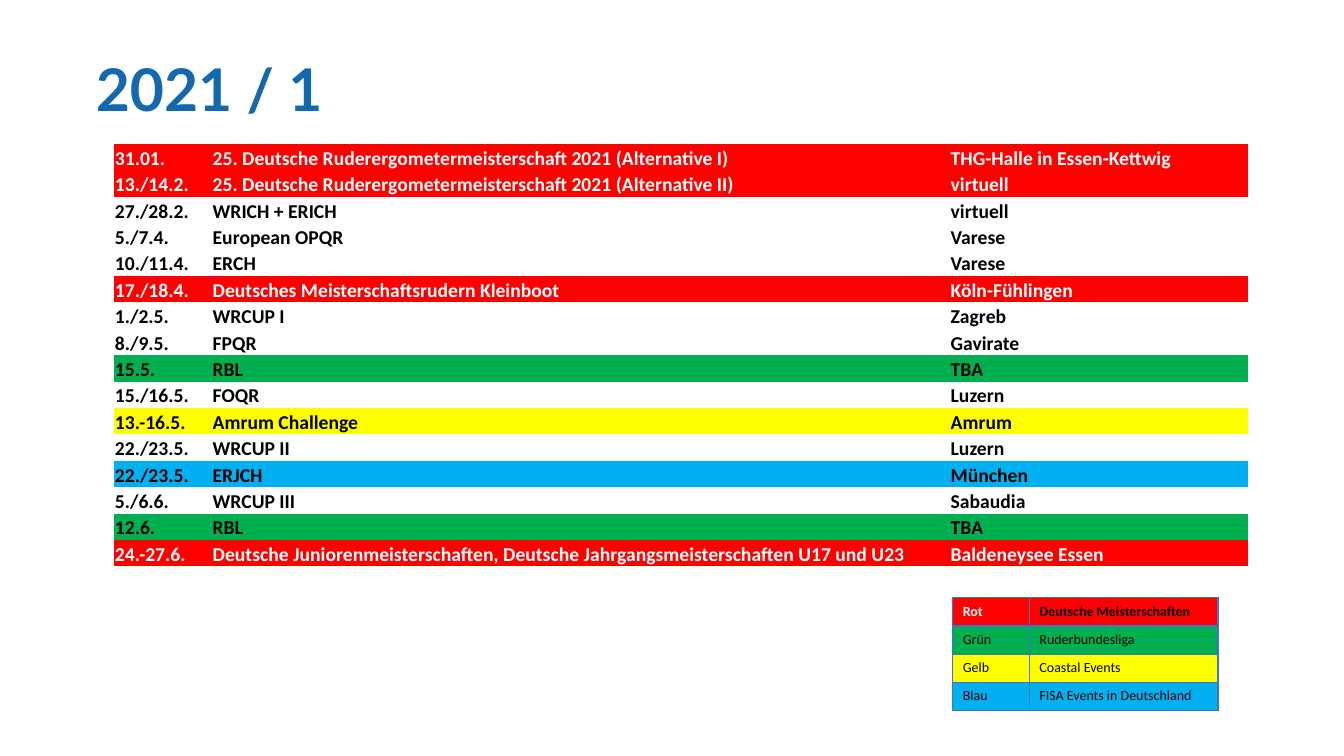
from lxml import etree
from pptx import Presentation
from pptx.dml.color import RGBColor
from pptx.enum import text
from pptx.oxml import ns
from pptx.util import Inches, Pt

COLORS = {
    "title": "1369B0",
    "white": "FFFFFF",
    "black": "000000",
    "red": "FF0000",
    "green": "00B050",
    "yellow": "FFFF00",
    "blue": "00B0F0",
    "border": "4472C4",
}
PLAIN_TABLE_STYLE = "{2D5ABB26-0587-4C30-8999-92F81FD0307C}"

EVENTS = [
    ("red", "31.01.", "25. Deutsche Ruderergometermeisterschaft 2021 (Alternative I)",
     "THG-Halle in Essen-Kettwig"),
    ("red", "13./14.2.", "25. Deutsche Ruderergometermeisterschaft 2021 (Alternative II)",
     "virtuell"),
    (None, "27./28.2.", "WRICH + ERICH", "virtuell"),
    (None, "5./7.4.", "European OPQR", "Varese"),
    (None, "10./11.4.", "ERCH", "Varese"),
    ("red", "17./18.4.", "Deutsches Meisterschaftsrudern Kleinboot", "Köln-Fühlingen"),
    (None, "1./2.5.", "WRCUP I", "Zagreb"),
    (None, "8./9.5.", "FPQR", "Gavirate"),
    ("green", "15.5.", "RBL", "TBA"),
    (None, "15./16.5.", "FOQR", "Luzern"),
    ("yellow", "13.-16.5.", "Amrum Challenge", "Amrum"),
    (None, "22./23.5.", "WRCUP II", "Luzern"),
    ("blue", "22./23.5.", "ERJCH", "München"),
    (None, "5./6.6.", "WRCUP III", "Sabaudia"),
    ("green", "12.6.", "RBL", "TBA"),
    ("red", "24.-27.6.",
     "Deutsche Juniorenmeisterschaften, Deutsche Jahrgangsmeisterschaften U17 und U23",
     "Baldeneysee Essen"),
]
LEGEND = [
    ("red", "Rot", "Deutsche Meisterschaften"),
    ("green", "Grün", "Ruderbundesliga"),
    ("yellow", "Gelb", "Coastal Events"),
    ("blue", "Blau", "FISA Events in Deutschland"),
]


def format_font(font, name, size, color, bold):
    font.name = name
    font.size = Pt(size)
    font.bold = bold
    font.color.rgb = RGBColor.from_string(COLORS[color])


def add_title(slide, left, top, width, height, title_text):
    title = slide.shapes.title
    title.left, title.top = Inches(left), Inches(top)
    title.width, title.height = Inches(width), Inches(height)
    frame = title.text_frame
    frame.text = title_text
    frame.word_wrap = True
    frame.vertical_anchor = text.MSO_ANCHOR.MIDDLE
    paragraph = frame.paragraphs[0]
    paragraph.alignment = text.PP_ALIGN.LEFT
    paragraph.line_spacing = 0.9
    format_font(paragraph.runs[0].font, "Lato", 42, "title", True)


def add_plain_table(slide, left, top, column_widths, height, row_count):
    """Add a table without style, with rows of equal height."""
    frame = slide.shapes.add_table(
        row_count, len(column_widths), Inches(left), Inches(top),
        Inches(sum(column_widths)), Inches(height))
    table = frame.table
    table.first_row = table.horz_banding = False
    table._tbl.tblPr.find(ns.qn("a:tableStyleId")).text = PLAIN_TABLE_STYLE
    for column, width in zip(table.columns, column_widths):
        column.width = Inches(width)
    for row in table.rows:
        row.height = Inches(height / row_count)
    return table


def fill_cell(cell, content, background, size, color, bold):
    cell.text = content
    format_font(cell.text_frame.paragraphs[0].runs[0].font, "Calibri", size, color, bold)
    if background:
        cell.fill.solid()
        cell.fill.fore_color.rgb = RGBColor.from_string(COLORS[background])
    else:
        cell.fill.background()


def add_cell_borders(cell, color, width):
    properties = cell._tc.get_or_add_tcPr()
    for side in ("lnL", "lnR", "lnT", "lnB"):
        line = etree.SubElement(properties, ns.qn("a:" + side), w=str(Pt(width)))
        fill = etree.SubElement(line, ns.qn("a:solidFill"))
        etree.SubElement(fill, ns.qn("a:srgbClr"), val=COLORS[color])


def add_events(slide, left, top, column_widths, height):
    table = add_plain_table(slide, left, top, column_widths, height, len(EVENTS))
    for row, (background, *contents) in zip(table.rows, EVENTS):
        color = "white" if background == "red" else "black"
        for cell, content in zip(row.cells, contents):
            cell.margin_left = cell.margin_right = cell.margin_top = Inches(0.01)
            cell.margin_bottom = 0
            cell.vertical_anchor = text.MSO_ANCHOR.BOTTOM
            fill_cell(cell, content, background, 14, color, True)


def add_legend(slide, left, top, column_widths, height):
    table = add_plain_table(slide, left, top, column_widths, height, len(LEGEND))
    for row, (background, *contents) in zip(table.rows, LEGEND):
        for cell, content in zip(row.cells, contents):
            color = "white" if content == "Rot" else "black"
            add_cell_borders(cell, "border", 1)
            fill_cell(cell, content, background, 10, color, background == "red")


def main():
    presentation = Presentation()
    presentation.slide_width = Inches(13.33)
    presentation.slide_height = Inches(7.5)
    slide = presentation.slides.add_slide(presentation.slide_layouts[5])
    add_title(slide, 0.85, 0.36, 9.73, 1.12, "2021 / 1")
    add_events(slide, 1.13, 1.43, (0.97, 7.32, 2.96), 4.19)
    add_legend(slide, 9.45, 5.93, (0.76, 1.87), 1.12)
    presentation.save("out.pptx")


if __name__ == "__main__":
    main()
